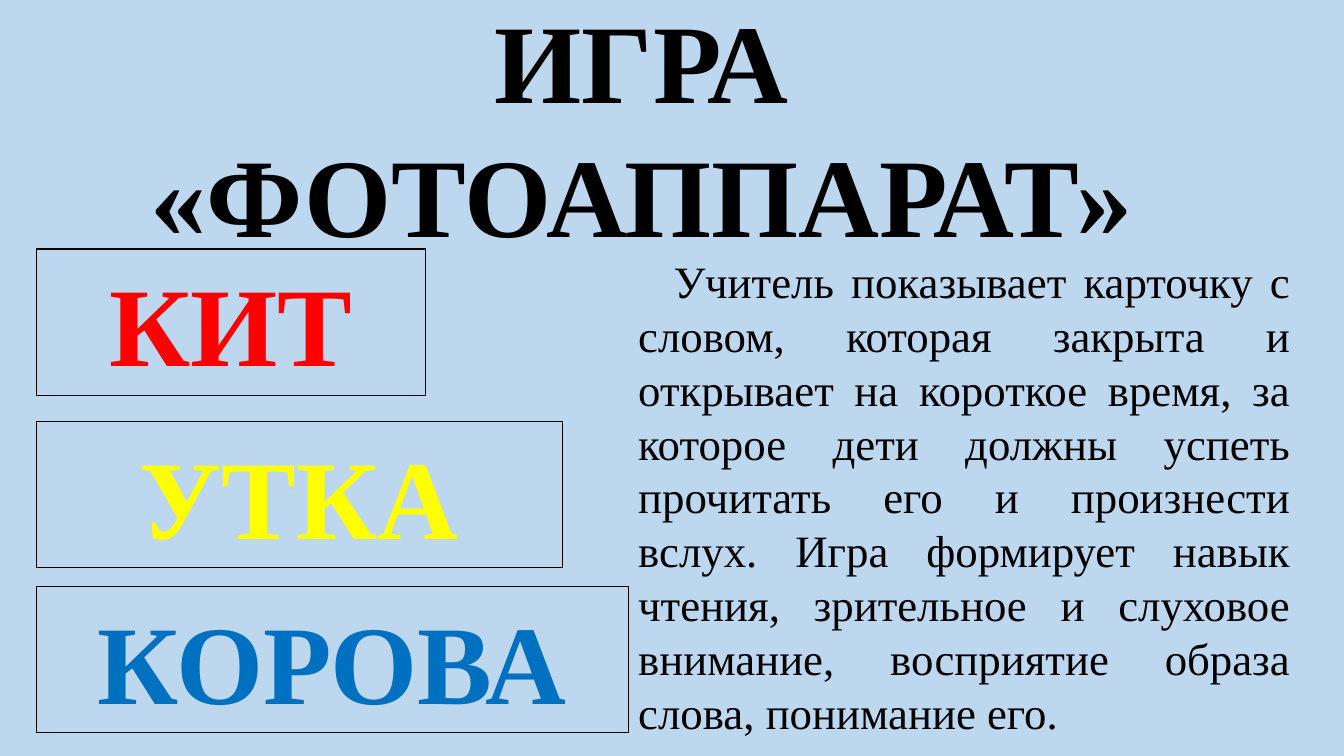
"""Build the reading game slide with three word cards and its rules."""
from dataclasses import dataclass

from lxml import etree
from pptx import Presentation
from pptx.dml.color import RGBColor
from pptx.enum.shapes import MSO_SHAPE
from pptx.enum.text import MSO_ANCHOR, MSO_AUTO_SIZE, PP_ALIGN
from pptx.oxml.ns import qn
from pptx.util import Inches, Pt

RECTANGLE = MSO_SHAPE.RECTANGLE
TOP, MIDDLE = MSO_ANCHOR.TOP, MSO_ANCHOR.MIDDLE
NO_FIT = MSO_AUTO_SIZE.NONE
CENTER, JUSTIFY = PP_ALIGN.CENTER, PP_ALIGN.JUSTIFY

TITLE_LINES = ["ИГРА", "«ФОТОАППАРАТ»"]
TITLE_AREA = (1.35, -0.15, 10.03, 2.79)
RULES = [
    "Учитель показывает карточку с словом, которая закрыта и открывает "
    "на короткое время, за которое дети должны успеть прочитать его и "
    "произнести вслух. Игра формирует навык чтения, зрительное и слуховое "
    "внимание, восприятие образа слова, понимание его."
]
RULES_AREA = (6.23, 2.47, 6.67, 4.95)
CARD_LEFT, CARD_HEIGHT = 0.36, 1.45
CARDS = [
    ("КИТ", 2.47, 3.86, "FF0000"),
    ("УТКА", 4.18, 5.22, "FFFF00"),
    ("КОРОВА", 5.82, 5.87, "0070C0"),
]


@dataclass(frozen=True)
class Theme:
    """Colours, type and spacing of the slide."""
    font: str = "Times New Roman"
    background: str = "BDD7EE"
    ink: str = "000000"
    large: int = 80
    normal: int = 32
    border: float = 0.75
    line_spacing: float = 1.0
    first_indent: float = 0.35


THEME = Theme()


def place(shape, area):
    """Move and size a shape to an area in inches."""
    shape.left, shape.top, shape.width, shape.height = map(Inches, area)


def write(shape, lines, size, color, align, bold=True, anchor=MIDDLE):
    """Fill a shape with formatted paragraphs."""
    frame = shape.text_frame
    frame.text = "\n".join(lines)
    frame.word_wrap = True
    frame.auto_size = NO_FIT
    frame.vertical_anchor = anchor
    for para in frame.paragraphs:
        para.alignment = align
        para.line_spacing = THEME.line_spacing
        para.space_before = para.space_after = Pt(0)
        for span in para.runs:
            span.font.name = THEME.font
            span.font.size = Pt(size)
            span.font.bold = bold
            span.font.color.rgb = RGBColor.from_string(color)


def indent_without_bullet(para):
    """Replace the bullet by a first-line indent."""
    properties = para._p.get_or_add_pPr()
    properties.set("marL", "0")
    properties.set("indent", str(Inches(THEME.first_indent)))
    etree.SubElement(properties, qn("a:buNone"))


def add_card(page, word, top, width, color):
    """Add one outlined word card."""
    card = page.shapes.add_shape(
        RECTANGLE, *map(Inches, (CARD_LEFT, top, width, CARD_HEIGHT)))
    card.shadow.inherit = False
    card.fill.background()
    card.line.color.rgb = RGBColor.from_string(THEME.ink)
    card.line.width = Pt(THEME.border)
    write(card, [word], THEME.large, color, CENTER)


def main():
    """Build and save the deck."""
    deck = Presentation()
    deck.slide_width, deck.slide_height = Inches(13.33), Inches(7.5)
    page = deck.slides.add_slide(deck.slide_layouts[1])
    page.background.fill.solid()
    page.background.fill.fore_color.rgb = RGBColor.from_string(THEME.background)

    title, rules = page.shapes.title, page.placeholders[1]
    place(title, TITLE_AREA)
    write(title, TITLE_LINES, THEME.large, THEME.ink, CENTER)
    place(rules, RULES_AREA)
    write(rules, RULES, THEME.normal, THEME.ink, JUSTIFY, bold=False, anchor=TOP)
    for para in rules.text_frame.paragraphs:
        indent_without_bullet(para)

    for card in CARDS:
        add_card(page, *card)
    deck.save("out.pptx")


if __name__ == "__main__":
    main()
